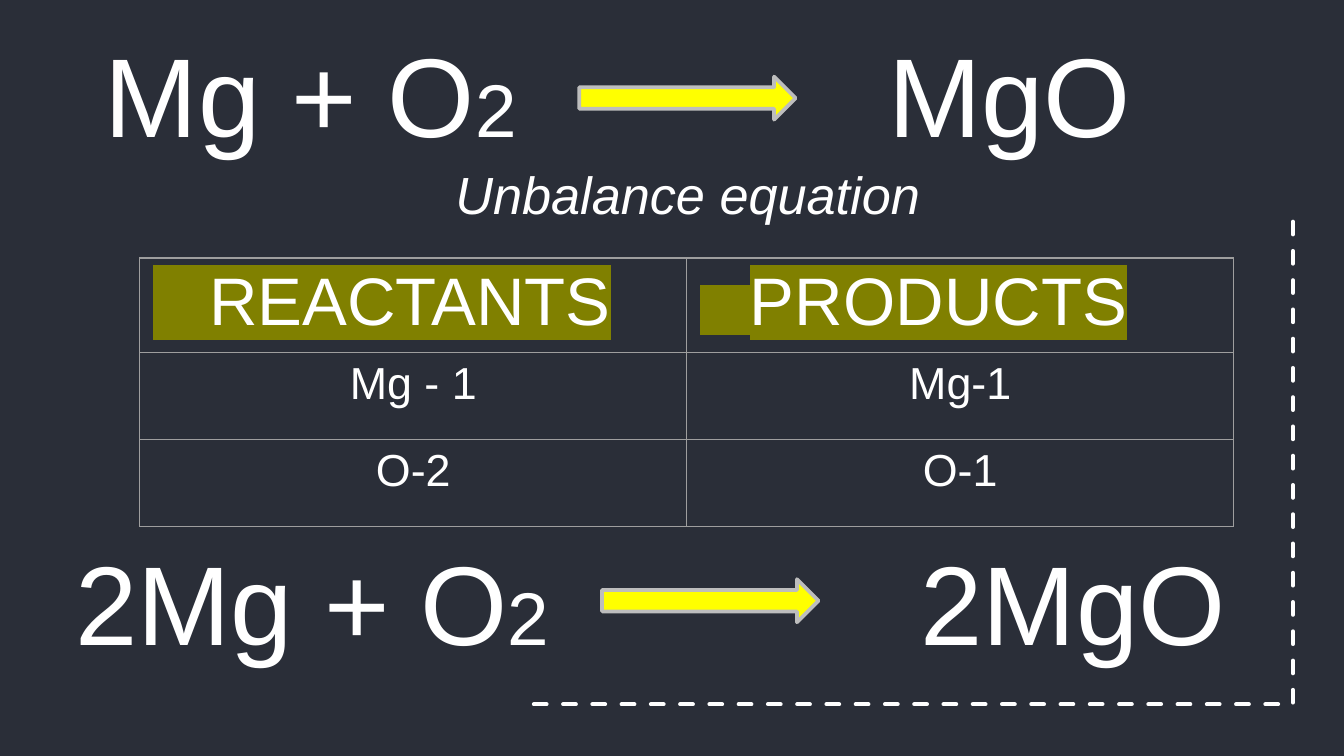
import pptx
import pptx.dml.color
import pptx.enum.dml
import pptx.enum.shapes
import pptx.enum.text
import pptx.oxml
import pptx.oxml.ns
import pptx.util
from pptx.util import Inches

RGBColor = pptx.dml.color.RGBColor
NAVY = RGBColor(0x2A, 0x2E, 0x38)
WHITE = RGBColor(0xFF, 0xFF, 0xFF)
YELLOW = RGBColor(0xFF, 0xFF, 0x00)
SILVER = RGBColor(0xBD, 0xBD, 0xBD)
GREY = RGBColor(0x9E, 0x9E, 0x9E)
OLIVE = RGBColor(0x80, 0x80, 0x00)
FONT = "Arial"
DRAWING_NS = pptx.oxml.ns.nsdecls("a")
LEFT = pptx.enum.text.PP_ALIGN.LEFT
CENTER = pptx.enum.text.PP_ALIGN.CENTER


def add_text(paragraph, text, size, italic=False, highlight=None):
    run = paragraph.add_run()
    run.text = text
    font = run.font
    font.size = pptx.util.Pt(size)
    font.bold = False
    font.italic = italic
    font.color.rgb = WHITE
    font.name = FONT
    if highlight is not None:
        fill = font._element.find(pptx.oxml.ns.qn("a:solidFill"))
        fill.addnext(pptx.oxml.parse_xml(
            f'<a:highlight {DRAWING_NS}><a:srgbClr val="{highlight}"/></a:highlight>'))


def prepare_frame(shape, box, margin_left=0.1):
    """Place a text shape and return its first paragraph."""
    shape.left, shape.top, shape.width, shape.height = map(Inches, box)
    frame = shape.text_frame
    frame.word_wrap = True
    frame.auto_size = pptx.enum.text.MSO_AUTO_SIZE.NONE
    frame.vertical_anchor = pptx.enum.text.MSO_ANCHOR.TOP
    frame.margin_left = Inches(margin_left)
    frame.margin_right = Inches(0.1)
    frame.margin_top = frame.margin_bottom = Inches(0.05)
    paragraph = frame.paragraphs[0]
    paragraph.alignment = LEFT
    return paragraph


def add_equation(slide, shape, box, reactants, product, product_tab, arrow_offset):
    """Fill a shape with an equation and draw its arrow, offset from the box."""
    paragraph = prepare_frame(shape, box, margin_left=0.56)
    paragraph._p.get_or_add_pPr().append(pptx.oxml.parse_xml(
        f'<a:tabLst {DRAWING_NS}><a:tab pos="{Inches(product_tab)}" algn="l"/></a:tabLst>'))
    add_text(paragraph, reactants, 60)
    add_text(paragraph, "2", 40)
    add_text(paragraph, "\t" + product, 60)

    left, top = box[:2]
    arrow = slide.shapes.add_shape(
        pptx.enum.shapes.MSO_SHAPE.RIGHT_ARROW,
        Inches(left + arrow_offset[0]), Inches(top + arrow_offset[1]),
        Inches(1.61), Inches(0.32))
    arrow.shadow.inherit = False
    arrow.fill.solid()
    arrow.fill.fore_color.rgb = YELLOW
    arrow.line.color.rgb = SILVER
    arrow.line.width = pptx.util.Pt(2)


def add_caption(slide, box):
    caption = slide.shapes.add_textbox(*map(Inches, box))
    add_text(prepare_frame(caption, box), "Unbalance equation", 28, italic=True)


def style_cell(cell):
    cell.fill.background()
    properties = cell._tc.get_or_add_tcPr()
    for position, side in enumerate(("lnL", "lnR", "lnT", "lnB")):
        properties.insert(position, pptx.oxml.parse_xml(
            f'<a:{side} {DRAWING_NS} w="{pptx.util.Pt(0.75)}"><a:solidFill>'
            f'<a:srgbClr val="{GREY}"/></a:solidFill></a:{side}>'))


def add_atom_table(slide, box):
    # The highlighted blanks before each heading are a visible part of its bar.
    headings = (
        (("   REACTANTS", 36),),
        (("    ", 24), ("PRODUCTS", 36)),
    )
    counts = (("Mg - 1", "Mg-1"), ("O-2", "O-1"))
    row_heights = (0.7, 0.65, 0.65)
    table = slide.shapes.add_table(3, 2, *map(Inches, box)).table
    table.first_row = table.horz_banding = False
    for column in table.columns:
        column.width = Inches(box[2] / 2)
    for row, height in zip(table.rows, row_heights):
        row.height = Inches(height)
    for cell in table.iter_cells():
        style_cell(cell)

    for column, heading in enumerate(headings):
        paragraph = table.cell(0, column).text_frame.paragraphs[0]
        for text, size in heading:
            add_text(paragraph, text, size, highlight=OLIVE)
    for row, atoms in enumerate(counts, start=1):
        for column, atom in enumerate(atoms):
            paragraph = table.cell(row, column).text_frame.paragraphs[0]
            paragraph.alignment = CENTER
            add_text(paragraph, atom, 24)


def add_corner_line(slide, box):
    """Draw a dashed line down the right side and along the bottom of the box."""
    left, top, width, height = map(Inches, box)
    right, bottom = left + width, top + height
    builder = slide.shapes.build_freeform(right, top)
    builder.add_line_segments([(right, bottom), (left, bottom)], close=False)
    corner = builder.convert_to_shape()
    corner.shadow.inherit = False
    corner.fill.background()
    corner.line.color.rgb = WHITE
    corner.line.width = pptx.util.Pt(2.25)
    corner.line.dash_style = pptx.enum.dml.MSO_LINE.DASH
    corner.line._get_or_add_ln().set("cap", "rnd")


def main():
    presentation = pptx.Presentation()
    presentation.slide_width = Inches(10)
    presentation.slide_height = Inches(10 * 9 / 16)
    slide = presentation.slides.add_slide(presentation.slide_layouts[5])
    slide.background.fill.solid()
    slide.background.fill.fore_color.rgb = NAVY

    add_corner_line(slide, (3.87, 1.65, 5.75, 3.59))
    add_equation(slide, slide.shapes.title, (0.22, 0.14, 9.78, 1.11),
                 "Mg + O", "MgO", 5.83, (4.09, 0.43))
    add_atom_table(slide, (1.04, 1.92, 8.14, 2))
    balanced_box = (0, 3.92, 9.78, 1.11)
    balanced = slide.shapes.add_textbox(*map(Inches, balanced_box))
    add_equation(slide, balanced, balanced_box,
                 "2Mg + O", "2MgO", 6.29, (4.48, 0.39))
    add_caption(slide, (3.29, 1.16, 4.24, 0.57))
    presentation.save("out.pptx")


if __name__ == "__main__":
    main()
